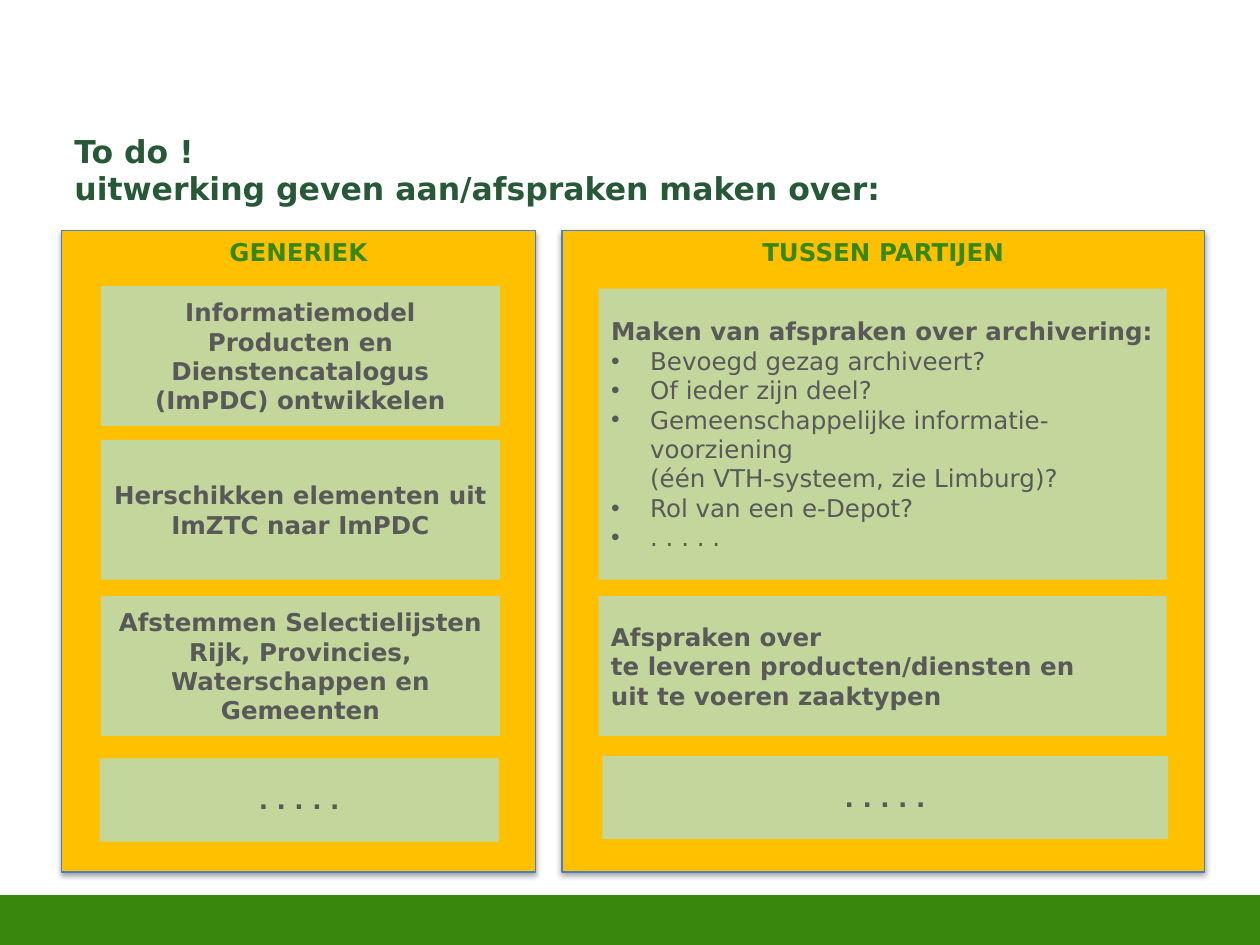
from lxml import etree
from pptx import Presentation
from pptx import util as u
from pptx.dml.color import RGBColor
from pptx.enum import shapes, text
from pptx.oxml import ns, parse_xml

HUE = {"bar": "39870C", "panel": "FFC000", "edge": "4B7EBC",
       "card": "C3D69B", "ink": "595959", "title": "275937"}
MID, LEFT = text.PP_ALIGN.CENTER, text.PP_ALIGN.LEFT
TOP, CORE = text.MSO_ANCHOR.TOP, text.MSO_ANCHOR.MIDDLE

deck = Presentation()
deck.slide_width, deck.slide_height = u.Inches(10), u.Inches(7.5)
COL, ROW = deck.slide_width / 100, deck.slide_height / 75
slide = deck.slides.add_slide(deck.slide_layouts[1])
title, body = slide.placeholders


def write(shape, words, size=14, hue="ink", bold=True, align=MID,
          anchor=CORE, bullets=False):
    """Fill a shape with paragraphs; with bullets, the first is a heading."""
    frame = shape.text_frame
    frame.word_wrap, frame.auto_size = True, text.MSO_AUTO_SIZE.NONE
    frame.vertical_anchor = anchor
    for n, line in enumerate(words):
        par = frame.paragraphs[0] if n == 0 else frame.add_paragraph()
        item = bullets and n > 0
        par.text = line
        par.alignment = align
        par.space_before = u.Pt(0)
        props = par._p.get_or_add_pPr()
        dent = u.Inches(0.31) if item else 0
        props.set("marL", str(dent))
        props.set("indent", str(-dent))
        if item:
            font = etree.SubElement(props, ns.qn("a:buFont"))
            font.set("typeface", "Arial")
            etree.SubElement(props, ns.qn("a:buChar")).set("char", "•")
        else:
            etree.SubElement(props, ns.qn("a:buNone"))
        for run in par.runs:
            run.font.name, run.font.size = "DejaVu Sans", u.Pt(size)
            run.font.bold = bold and not item
            run.font.color.rgb = RGBColor.from_string(HUE[hue])


def place(x, y, wide, high, fill=None, edge=None, shape=None):
    """Set out a rectangle, or a given placeholder, in columns and rows."""
    spot = [round(v) for v in (x * COL, y * ROW, wide * COL, high * ROW)]
    if shape is None:
        shape = slide.shapes.add_shape(shapes.MSO_SHAPE.RECTANGLE, *spot)
        shape.shadow.inherit = False
    else:
        shape.left, shape.top, shape.width, shape.height = spot
    if fill:
        shape.fill.solid()
        shape.fill.fore_color.rgb = RGBColor.from_string(HUE[fill])
    if edge:
        shape.line.color.rgb = RGBColor.from_string(HUE[edge])
        shape.line.width = u.Pt(0.75)
    else:
        shape.line.fill.background()
    return shape


place(4.9, 9.8, 90, 7.3, shape=title)
write(title, ["To do !\nuitwerking geven aan/afspraken maken over:"],
      size=18, hue="title", align=LEFT)

bar = place(0, 71.2, 100, 3.9, "bar", "bar")
bar.line.width = u.Pt(2)

for x, wide, head in [(44.6, 51, "TUSSEN PARTIJEN"), (4.9, 37.6, "GENERIEK")]:
    panel = place(x, 18.3, wide, 50.9, "panel", "edge")
    write(panel, [head], hue="bar", anchor=TOP)
    glow = panel._element.spPr.find(ns.qn("a:effectLst"))
    glow.append(parse_xml(
        f'<a:outerShdw {ns.nsdecls("a")} blurRad="{u.Pt(3.1)}" '
        f'dist="{u.Pt(1.8)}" dir="5400000" rotWithShape="0">'
        '<a:srgbClr val="000000"><a:alpha val="35000"/></a:srgbClr>'
        '</a:outerShdw>'))

cards = [
    (8, 22.7, 31.7, 11.1, MID,
     "Informatiemodel Producten en Dienstencatalogus (ImPDC) ontwikkelen"),
    (8, 34.9, 31.7, 11.1, MID, "Herschikken elementen uit ImZTC naar ImPDC"),
    (8, 47.3, 31.7, 11.1, MID,
     "Afstemmen Selectielijsten Rijk, Provincies, Waterschappen en Gemeenten"),
    (47.5, 47.3, 45.1, 11.1, LEFT,
     "Afspraken over\nte leveren producten/diensten en\n"
     "uit te voeren zaaktypen"),
    (7.9, 60.2, 31.7, 6.6, MID, ". . . . ."),
    (47.8, 60, 44.9, 6.6, MID, ". . . . ."),
]
for *spot, align, words in cards:
    write(place(*spot, "card"), [words], align=align)

place(47.5, 22.9, 45.1, 23.1, "card", shape=body)
write(body, ["Maken van afspraken over archivering:",
             "Bevoegd gezag archiveert?",
             "Of ieder zijn deel?",
             "Gemeenschappelijke informatie-voorziening\n"
             "(één VTH-systeem, zie Limburg)?",
             "Rol van een e-Depot?",
             ". . . . ."], align=LEFT, bullets=True)
# The list lies on top of its panel
body._element.getparent().append(body._element)

deck.save("out.pptx")
